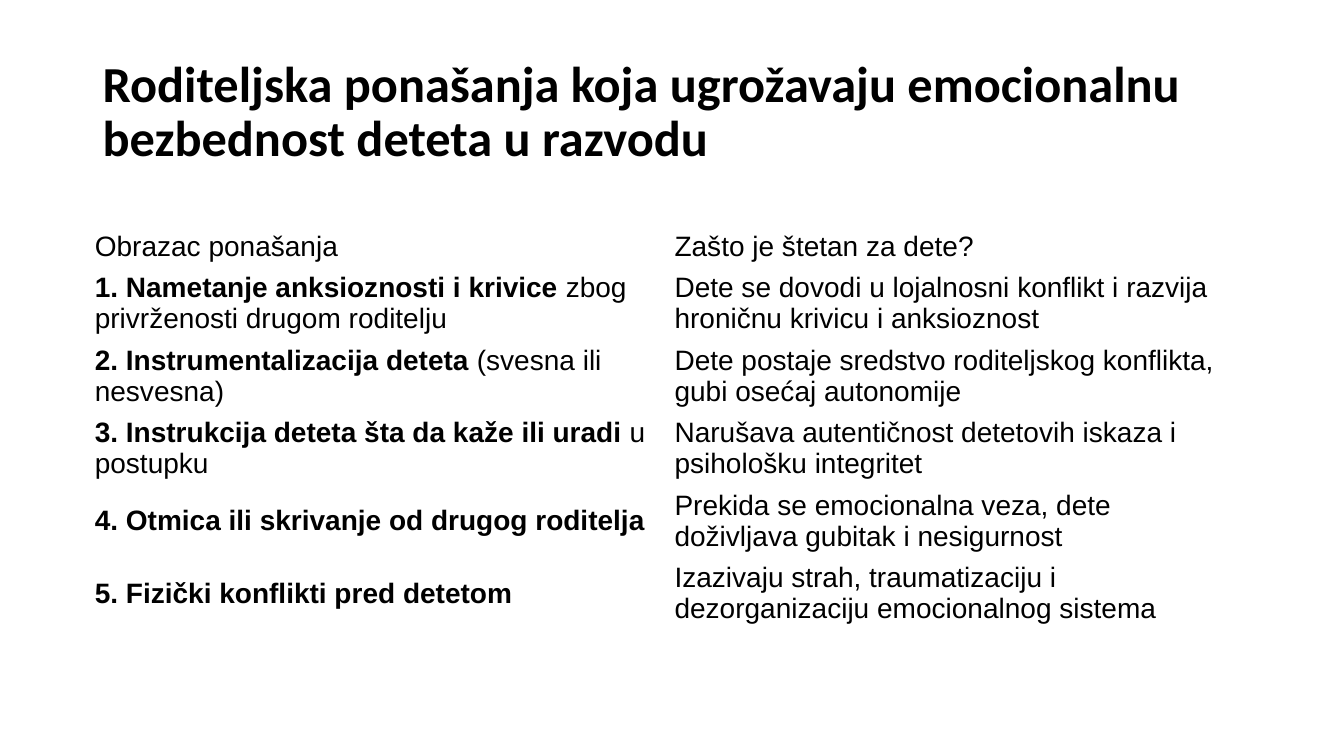
from pptx import Presentation
from pptx.dml.color import RGBColor
from pptx.enum.text import MSO_ANCHOR
from pptx.util import Inches, Pt

MIDDLE = MSO_ANCHOR.MIDDLE

HEADINGS = ("Obrazac ponašanja", "Zašto je štetan za dete?")
BEHAVIOURS = [
    ("1. Nametanje anksioznosti i krivice ", "zbog privrženosti drugom roditelju",
     "Dete se dovodi u lojalnosni konflikt i razvija hroničnu krivicu i anksioznost"),
    ("2. Instrumentalizacija deteta", " (svesna ili nesvesna)",
     "Dete postaje sredstvo roditeljskog konflikta, gubi osećaj autonomije"),
    ("3. Instrukcija deteta šta da kaže ili uradi", " u postupku",
     "Narušava autentičnost detetovih iskaza i psihološku integritet"),
    ("4. Otmica ili skrivanje od drugog roditelja", "",
     "Prekida se emocionalna veza, dete doživljava gubitak i nesigurnost"),
    ("5. Fizički konflikti pred detetom", "",
     "Izazivaju strah, traumatizaciju i dezorganizaciju emocionalnog sistema"),
]


def rgb(value):
    return RGBColor.from_string(value)


def add_text(paragraph, text, size=20, font="Arial", color="000000", bold=False):
    run = paragraph.add_run()
    run.text = text
    run.font.size = Pt(size)
    run.font.name = font
    run.font.bold = bold
    run.font.color.rgb = rgb(color)


class SlideBuilder:
    heading_height = 0.41
    row_height = 0.72
    cell_margin = 0.02

    def __init__(self, slide):
        self.slide = slide

    def title(self, text, left, top, width, height):
        box = self.slide.shapes.add_textbox(
            Inches(left), Inches(top), Inches(width), Inches(height))
        frame = box.text_frame
        frame.word_wrap = True
        frame.vertical_anchor = MIDDLE
        paragraph = frame.paragraphs[0]
        paragraph.line_spacing = 0.9
        add_text(paragraph, text, size=36, font="Calibri", bold=True)

    def table(self, rows, left, top, width):
        columns = len(rows[0])
        height = self.heading_height + self.row_height * (len(rows) - 1)
        table = self.slide.shapes.add_table(
            len(rows), columns, Inches(left), Inches(top),
            Inches(width), Inches(height)).table
        table.first_row = False
        table.horz_banding = False
        for column in table.columns:
            column.width = Inches(width / columns)
        for r, row in enumerate(rows):
            table.rows[r].height = Inches(self.row_height if r else self.heading_height)
            for c, parts in enumerate(row):
                cell = table.cell(r, c)
                cell.fill.background()
                cell.vertical_anchor = MIDDLE
                cell.margin_top = cell.margin_bottom = Inches(self.cell_margin)
                for text, bold in parts:
                    add_text(cell.text_frame.paragraphs[0], text, bold=bold)


def main():
    presentation = Presentation()
    presentation.slide_width = Inches(13.33)
    presentation.slide_height = Inches(7.5)
    builder = SlideBuilder(presentation.slides.add_slide(presentation.slide_layouts[6]))
    builder.title(
        "Roditeljska ponašanja koja ugrožavaju emocionalnu bezbednost deteta u razvodu",
        0.92, 0.4, 11.5, 1.45)
    rows = [[[(heading, False)] for heading in HEADINGS]]
    for behaviour, detail, harm in BEHAVIOURS:
        pattern = [(behaviour, True)]
        if detail:
            pattern.append((detail, False))
        rows.append([pattern, [(harm, False)]])
    builder.table(rows, 0.84, 2.24, 11.5)
    presentation.save("out.pptx")


if __name__ == "__main__":
    main()
